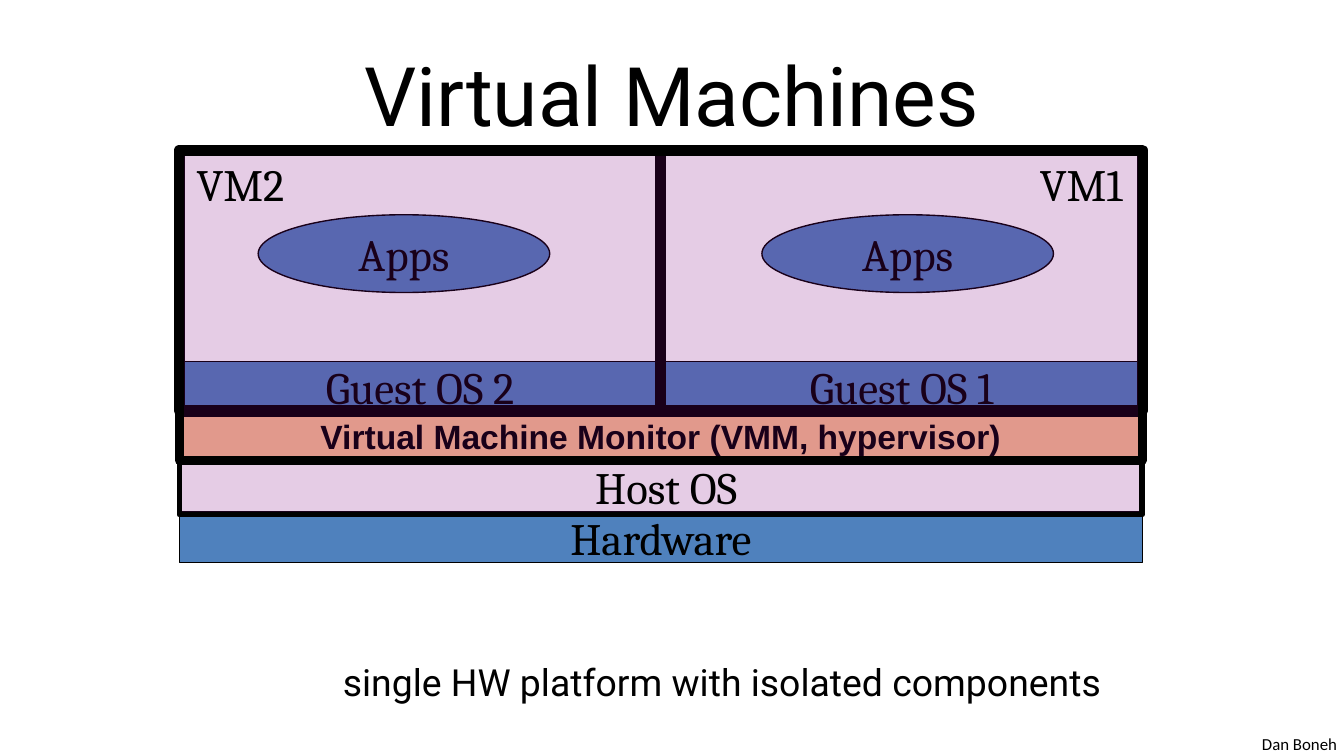
from lxml import etree
from pptx import Presentation
from pptx.dml.color import RGBColor
from pptx.enum.shapes import MSO_SHAPE
from pptx.enum.text import MSO_ANCHOR, PP_ALIGN
from pptx.oxml.ns import qn
from pptx.util import Cm, Pt

RECT, OVAL = MSO_SHAPE.RECTANGLE, MSO_SHAPE.OVAL
MIDDLE, TOP = MSO_ANCHOR.MIDDLE, MSO_ANCHOR.TOP
CENTER, LEFT = PP_ALIGN.CENTER, PP_ALIGN.LEFT

BLACK = RGBColor(0x00, 0x00, 0x00)
BLUE = RGBColor(0x4F, 0x81, 0xBD)
ORANGE = RGBColor(0xFA, 0xC0, 0x90)
PURPLE = RGBColor(0x80, 0x00, 0x80)

TITLE = "Virtual Machines"
CAPTION = "single HW platform with isolated components"
AUTHOR = "Dan Boneh"
MONITOR = "Virtual Machine Monitor (VMM, hypervisor)"
HOST = "Host OS"
HARDWARE = "Hardware"
APPS = "Apps"
MACHINES = [
    {"name": "VM2", "guest": "Guest OS 2", "name_x": 0, "apps_x": 1.49},
    {"name": "VM1", "guest": "Guest OS 1", "name_x": 6.79, "apps_x": 1.91},
]

STACK_LEFT, STACK_TOP, STACK_WIDTH = 3.39, 2.84, 18.2
MACHINE_WIDTH = STACK_WIDTH / len(MACHINES)
MACHINE_HEIGHT = 4.93
GUEST_HEIGHT = 0.93
LAYER_HEIGHT = 0.96
MONITOR_TOP = STACK_TOP + MACHINE_HEIGHT
HARDWARE_TOP = 9.68
NAME_WIDTH, NAME_HEIGHT = 2.31, 1.27


def write(shape, text, font="Cambria", size=24, bold=False, align=CENTER,
          anchor=MIDDLE, wrap=False, spacing=None):
    frame = shape.text_frame
    frame.word_wrap = wrap
    frame.vertical_anchor = anchor
    paragraph = frame.paragraphs[0]
    paragraph.alignment = align
    if spacing:
        paragraph.line_spacing = spacing
    run = paragraph.add_run()
    run.text = text
    run.font.name = font
    run.font.size = Pt(size)
    run.font.bold = bold
    run.font.color.rgb = BLACK


def add_box(slide, kind, left, top, width, height, fill=None, line=0.75, alpha=None):
    box = slide.shapes.add_shape(kind, Cm(left), Cm(top), Cm(width), Cm(height))
    box.shadow.inherit = False
    box.line.color.rgb = BLACK
    box.line.width = Pt(line)
    if fill is None:
        box.fill.background()
    else:
        box.fill.solid()
        box.fill.fore_color.rgb = fill
    if alpha is not None:
        color = box.fill._xPr.find(qn("a:solidFill"))[0]
        etree.SubElement(color, qn("a:alpha")).set("val", str(alpha * 1000))
    return box


def add_label(slide, text, left, top, width, height, **style):
    label = slide.shapes.add_textbox(Cm(left), Cm(top), Cm(width), Cm(height))
    write(label, text, **style)


def add_machine(slide, machine, left):
    guest = add_box(slide, RECT, left, MONITOR_TOP - GUEST_HEIGHT,
                    MACHINE_WIDTH, GUEST_HEIGHT, BLUE)
    write(guest, machine["guest"])
    add_box(slide, RECT, left, STACK_TOP, MACHINE_WIDTH, MACHINE_HEIGHT, line=6)
    apps = add_box(slide, OVAL, left + machine["apps_x"], 4.06, 5.51, 1.47, BLUE)
    write(apps, APPS)


def main():
    deck = Presentation()
    deck.slide_width, deck.slide_height = Cm(25.4), Cm(14.29)
    slide = deck.slides.add_slide(deck.slide_layouts[6])

    add_label(slide, AUTHOR, 23.6, 13.74, 1.93, 0.64,
              font="Calibri", size=9, align=LEFT, anchor=TOP)
    add_label(slide, TITLE, 1.27, 0.58, 22.86, 2.39, font="Roboto", size=44, wrap=True)

    monitor = add_box(slide, RECT, STACK_LEFT, MONITOR_TOP, STACK_WIDTH, LAYER_HEIGHT, ORANGE)
    write(monitor, MONITOR, font="Arial", size=18, bold=True)

    lefts = [STACK_LEFT + i * MACHINE_WIDTH for i in range(len(MACHINES))]
    for machine, left in zip(MACHINES, lefts):
        add_machine(slide, machine, left)

    hardware = add_box(slide, RECT, STACK_LEFT, HARDWARE_TOP, STACK_WIDTH, LAYER_HEIGHT, BLUE)
    write(hardware, HARDWARE)
    add_box(slide, RECT, STACK_LEFT, 2.9, STACK_WIDTH, 6.83, PURPLE, line=3, alpha=20)
    add_label(slide, HOST, 11, 8.56, 3.43, NAME_HEIGHT, align=LEFT, anchor=TOP)
    add_box(slide, RECT, STACK_LEFT, STACK_TOP, STACK_WIDTH, 5.87, line=4.5)

    for machine, left in zip(MACHINES, lefts):
        add_label(slide, machine["name"], left + machine["name_x"], STACK_TOP,
                  NAME_WIDTH, NAME_HEIGHT, anchor=TOP)

    add_label(slide, CAPTION, 2.54, 11.66, 22.22, 1.55,
              font="Roboto", size=20, anchor=TOP, wrap=True, spacing=1.8)
    deck.save("out.pptx")


if __name__ == "__main__":
    main()
